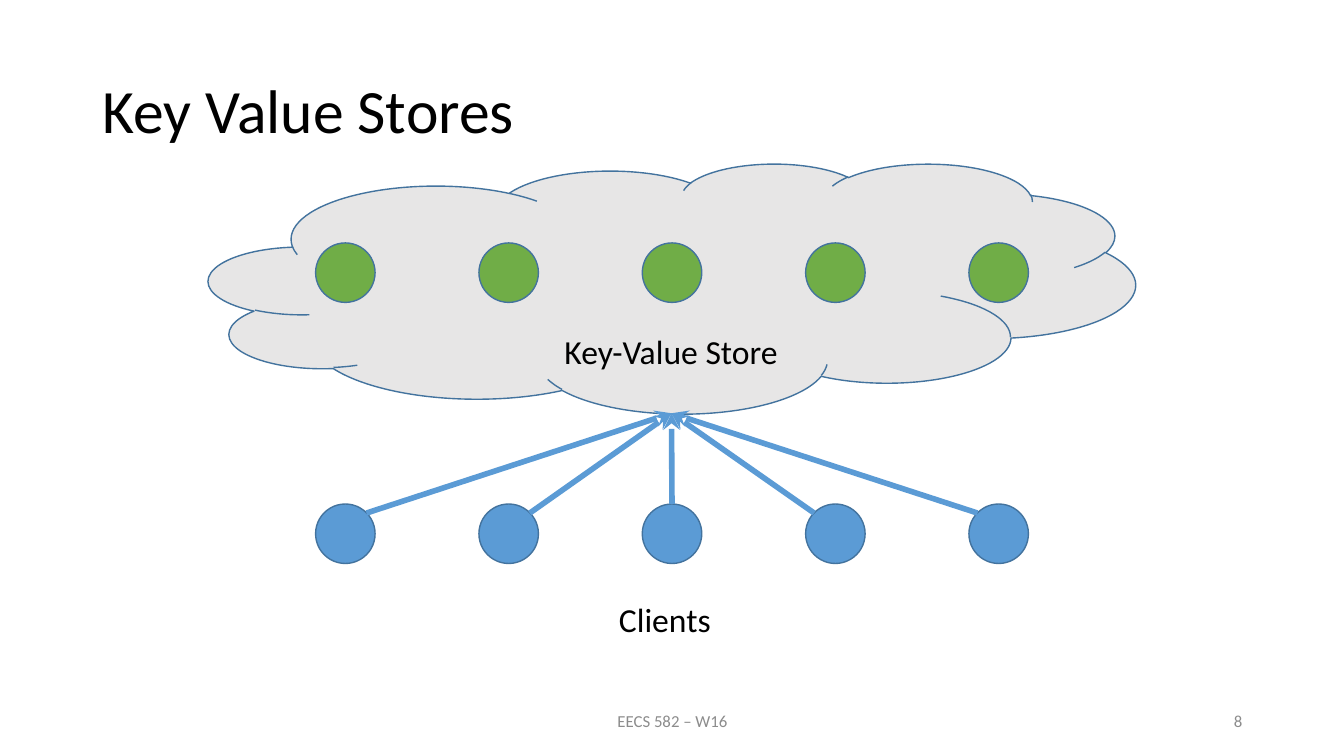
from lxml import etree
from pptx import Presentation
from pptx.dml.color import RGBColor
from pptx.enum.shapes import MSO_CONNECTOR, MSO_SHAPE
from pptx.enum.text import MSO_ANCHOR as ANCHOR, PP_ALIGN as ALIGN
from pptx.oxml.ns import qn
from pptx.util import Inches, Pt

COLORS = {
    "cloud": "E7E6E6",
    "server": "70AD47",
    "client": "5B9BD5",
    "outline": "43739E",
    "text": "000000",
    "footer": "8C8C8C",
}
FONT = "Calibri"
NODE_COUNT = 5
NODE_SIZE = 0.59
NODE_LEFT, NODE_STEP = 3.13, 1.62
SERVER_TOP, CLIENT_TOP = 2.41, 5
CLOUD_BOTTOM = (6.66, 4.1)


def rgb(name):
    return RGBColor.from_string(COLORS[name])


def add_text(slide, text, box, size, color="text", align=ALIGN.LEFT,
             anchor=ANCHOR.TOP, spacing=None):
    tf = slide.shapes.add_textbox(*map(Inches, box)).text_frame
    tf.word_wrap = True
    tf.vertical_anchor = anchor
    p = tf.paragraphs[0]
    p.text = text
    p.alignment = align
    p.line_spacing = spacing
    p.font.name = FONT
    p.font.size = Pt(size)
    p.font.color.rgb = rgb(color)


def add_outlined(slide, kind, box, fill):
    sp = slide.shapes.add_shape(kind, *map(Inches, box))
    sp.shadow.inherit = False
    sp.fill.solid()
    sp.fill.fore_color.rgb = rgb(fill)
    sp.line.color.rgb = rgb("outline")
    sp.line.width = Pt(1)


def add_node_row(slide, top, fill):
    for i in range(NODE_COUNT):
        box = (NODE_LEFT + i * NODE_STEP, top, NODE_SIZE, NODE_SIZE)
        add_outlined(slide, MSO_SHAPE.OVAL, box, fill)


def add_arrow(slide, start, end):
    line = slide.shapes.add_connector(
        MSO_CONNECTOR.STRAIGHT, *map(Inches, (*start, *end)))
    line.line.color.rgb = rgb("client")
    line.line.width = Pt(4)
    etree.SubElement(line.line._get_or_add_ln(), qn("a:tailEnd"), type="stealth")
    etree.SubElement(line._element.spPr, qn("a:effectLst"))


def add_client_arrows(slide):
    """Run an arrow from the inner upper edge of each client to the cloud."""
    middle = NODE_COUNT // 2
    for i in range(NODE_COUNT):
        side = (i < middle) - (i > middle)
        x = NODE_LEFT + i * NODE_STEP + NODE_SIZE / 2 + side * 0.21
        y = CLIENT_TOP + abs(side) * 0.09
        add_arrow(slide, (x, y), CLOUD_BOTTOM)


def main():
    prs = Presentation()
    prs.slide_width, prs.slide_height = Inches(13.33), Inches(7.5)
    s = prs.slides.add_slide(prs.slide_layouts[6])

    add_outlined(s, MSO_SHAPE.CLOUD, (2.07, 1.62, 9.19, 2.48), "cloud")
    add_text(s, "Key Value Stores", (0.92, 0.4, 11.5, 1.45), 44,
             anchor=ANCHOR.MIDDLE, spacing=0.9)
    add_text(s, "EECS 582 – W16", (4.42, 6.95, 4.5, 0.4), 12, "footer",
             ALIGN.CENTER, ANCHOR.MIDDLE)
    add_text(s, "8", (9.42, 6.95, 3, 0.4), 12, "footer",
             ALIGN.RIGHT, ANCHOR.MIDDLE)

    add_node_row(s, SERVER_TOP, "server")
    add_text(s, "Key-Value Store", (5.5, 3.23, 2.93, 0.5), 24)
    add_node_row(s, CLIENT_TOP, "client")
    add_text(s, "Clients", (6.04, 5.89, 1.25, 0.5), 24)
    add_client_arrows(s)

    prs.save("out.pptx")


if __name__ == "__main__":
    main()
